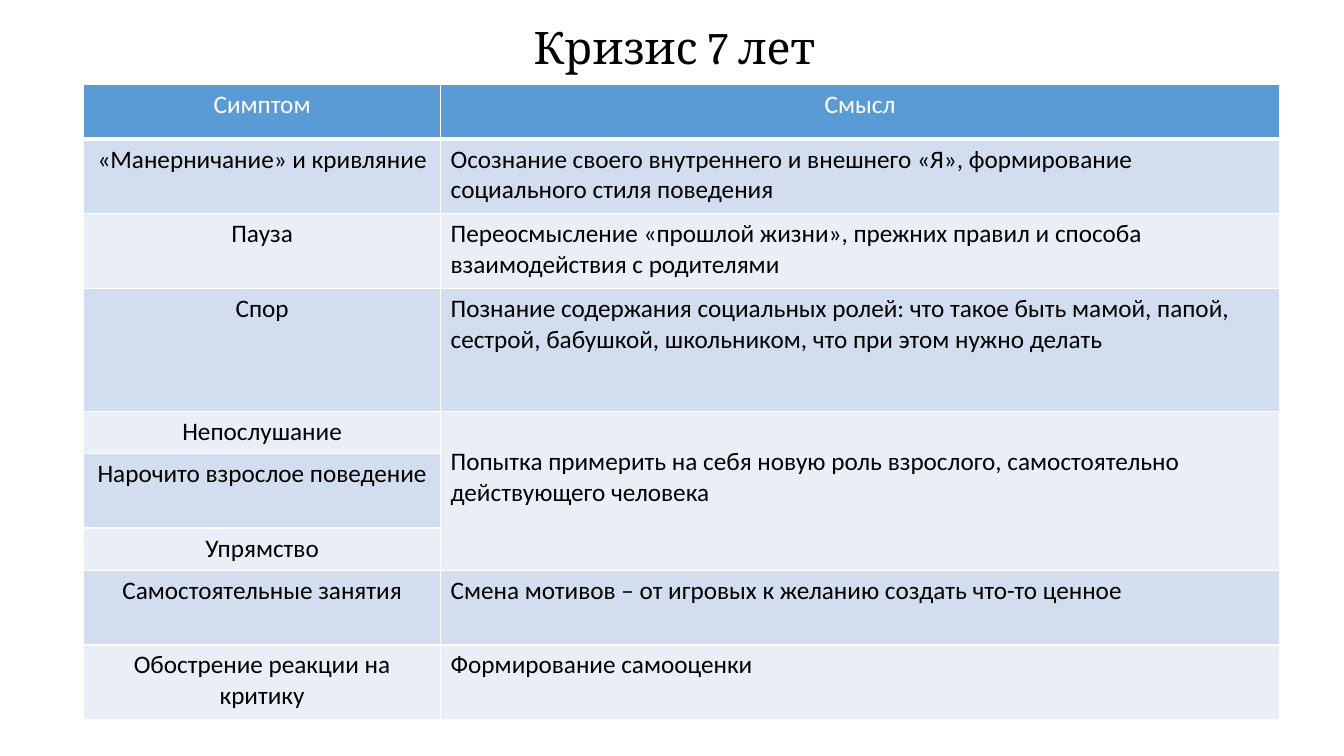
from dataclasses import dataclass

from lxml import etree
from pptx import Presentation
from pptx.dml.color import RGBColor
from pptx.enum import text
from pptx.oxml import ns
from pptx.util import Inches, Pt


@dataclass(frozen=True)
class Theme:
    ink: str = "000000"
    paper: str = "FFFFFF"
    header: str = "5B9BD5"
    bands: tuple = ("D2DEEF", "EAEFF7")
    title_font: str = "Cambria"
    body_font: str = "Calibri"
    title_size: int = 32
    body_size: int = 18
    rule: int = 1
    header_rule: int = 3


THEME = Theme()
CENTER, LEFT = text.PP_ALIGN.CENTER, text.PP_ALIGN.LEFT

TITLE = "Кризис 7 лет"
ROLE = "Попытка примерить на себя новую роль взрослого, самостоятельно действующего человека"
COLUMN_WIDTHS = (3.54, 8.32)
# Row height, symptom, meaning (None continues the meaning above)
ROWS = (
    (0.54, "Симптом", "Смысл"),
    (0.74, "«Манерничание» и кривляние",
     "Осознание своего внутреннего и внешнего «Я», формирование социального стиля поведения"),
    (0.74, "Пауза",
     "Переосмысление «прошлой жизни», прежних правил и способа взаимодействия с родителями"),
    (1.22, "Спор",
     "Познание содержания социальных ролей: что такое быть мамой, папой, сестрой, "
     "бабушкой, школьником, что при этом нужно делать"),
    (0.42, "Непослушание", ROLE),
    (0.74, "Нарочито взрослое поведение", None),
    (0.42, "Упрямство", None),
    (0.74, "Самостоятельные занятия",
     "Смена мотивов – от игровых к желанию создать что-то ценное"),
    (0.74, "Обострение реакции на критику", "Формирование самооценки"),
)


def apply(target, formats):
    for name, value in formats.items():
        setattr(target, name, value)


def write(para, words, font, size, color, align):
    para.alignment = align
    span = para.add_run()
    span.text = words
    apply(span.font, {"name": font, "size": Pt(size), "bold": False})
    span.font.color.rgb = RGBColor.from_string(color)


def add_borders(cell, bottom):
    properties = cell._tc.get_or_add_tcPr()
    for side in "LRTB":
        width = bottom if side == "B" else THEME.rule
        line = etree.SubElement(properties, ns.qn(f"a:ln{side}"), w=str(Pt(width)))
        fill = etree.SubElement(line, ns.qn("a:solidFill"))
        etree.SubElement(fill, ns.qn("a:srgbClr"), val=THEME.paper)


def add_title(page, left, top, width, height):
    box = page.shapes.title
    apply(box, {"left": Inches(left), "top": Inches(top),
                "width": Inches(width), "height": Inches(height)})
    frame = box.text_frame
    apply(frame, {"word_wrap": True, "auto_size": text.MSO_AUTO_SIZE.NONE,
                  "vertical_anchor": text.MSO_ANCHOR.MIDDLE})
    para = frame.paragraphs[0]
    para.line_spacing = 0.9
    write(para, TITLE, THEME.title_font, THEME.title_size, THEME.ink, CENTER)


def add_symptom_table(page, left, top):
    width, height = sum(COLUMN_WIDTHS), sum(row[0] for row in ROWS)
    table = page.shapes.add_table(len(ROWS), len(COLUMN_WIDTHS), Inches(left), Inches(top),
                                  Inches(width), Inches(height)).table
    for column, size in zip(table.columns, COLUMN_WIDTHS):
        column.width = Inches(size)

    # Header, then alternating bands
    for index, (row_height, *words) in enumerate(ROWS):
        is_header = index == 0
        table.rows[index].height = Inches(row_height)
        fill = THEME.header if is_header else THEME.bands[(index - 1) % 2]
        color = THEME.paper if is_header else THEME.ink
        for column, entry in enumerate(words):
            cell = table.cell(index, column)
            add_borders(cell, THEME.header_rule if is_header else THEME.rule)
            cell.fill.solid()
            cell.fill.fore_color.rgb = RGBColor.from_string(fill)
            if entry:
                align = CENTER if is_header or column == 0 else LEFT
                write(cell.text_frame.paragraphs[0], entry,
                      THEME.body_font, THEME.body_size, color, align)

    # One meaning shared by several symptoms, set one line lower
    shared = [index for index, row in enumerate(ROWS) if row[2] is None]
    role = table.cell(shared[0] - 1, 1)
    role.merge(table.cell(shared[-1], 1))
    role.margin_top = Inches(0.35)


def main():
    deck = Presentation()
    apply(deck, {"slide_width": Inches(13.33), "slide_height": Inches(7.5)})
    page = deck.slides.add_slide(deck.slide_layouts[5])
    add_title(page, 0.94, 0.17, 11.5, 0.65)
    add_symptom_table(page, 0.83, 0.84)
    deck.save("out.pptx")


if __name__ == "__main__":
    main()
